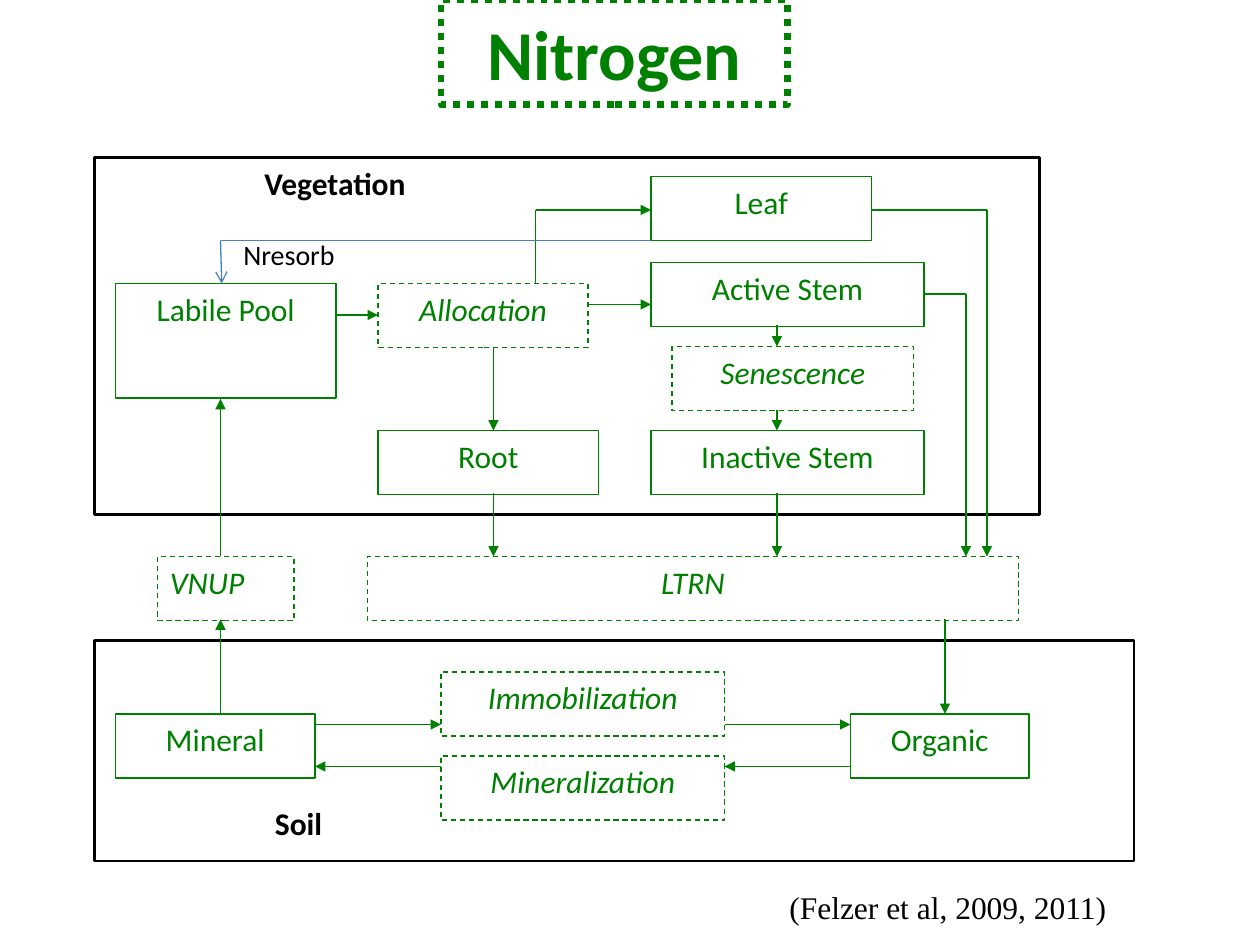
import itertools

import pptx
import pptx.dml.color
import pptx.enum.dml
import pptx.enum.shapes
import pptx.enum.text
import pptx.oxml
import pptx.oxml.ns
import pptx.util

Pt = pptx.util.Pt
ALIGN = pptx.enum.text.PP_ALIGN
DASH = pptx.enum.dml.MSO_LINE
COLORS = {"green": "008000", "black": "000000", "blue": "4B7EBC"}


class Diagram:
    """Style and current page; all lengths are in points."""

    font = "Calibri"
    size = 18
    line_width = 0.75

    def __init__(self, page):
        self.page = page

    def color(self, name):
        return pptx.dml.color.RGBColor.from_string(COLORS[name])

    def place(self, box, left, top, width, height):
        box.left, box.top, box.width, box.height = map(Pt, (left, top, width, height))

    def outline(self, line, color, width, dash=None):
        line.color.rgb = self.color(color)
        line.width = Pt(width)
        if dash:
            line.dash_style = dash

    def add_text(self, box, text, color, align=ALIGN.LEFT, size=None, font=None,
                 bold=False, italic=False, wrap=True):
        frame = box.text_frame
        frame.word_wrap = wrap
        fit = pptx.enum.text.MSO_AUTO_SIZE
        frame.auto_size = fit.NONE if wrap else fit.SHAPE_TO_FIT_TEXT
        para = frame.paragraphs[0]
        para.alignment = align
        span = para.add_run()
        span.text = text
        span.font.name = font or self.font
        span.font.size = Pt(size or self.size)
        span.font.bold, span.font.italic = bold, italic
        span.font.color.rgb = self.color(color)

    def title(self, text, *area):
        box = self.page.shapes.title
        self.place(box, *area)
        self.outline(box.line, "green", 4, DASH.ROUND_DOT)
        self.add_text(box, text, "green", ALIGN.CENTER, size=40, bold=True)
        box.text_frame.vertical_anchor = pptx.enum.text.MSO_ANCHOR.MIDDLE

    def frame(self, left, top, width, height, color="black", line_width=1.5, dash=None):
        box = self.page.shapes.add_shape(
            pptx.enum.shapes.MSO_SHAPE.RECTANGLE, *map(Pt, (left, top, width, height)))
        box.shadow.inherit = False
        box.fill.background()
        self.outline(box.line, color, line_width, dash)
        return box

    def node(self, text, left, top, width, height=36.6, flux=False, align=ALIGN.CENTER):
        """A pool has a solid outline; a flux is dashed with italic text."""
        box = self.frame(left, top, width, height, "green", self.line_width,
                         DASH.DASH if flux else None)
        box.text_frame.vertical_anchor = pptx.enum.text.MSO_ANCHOR.TOP
        self.add_text(box, text, "green", align, italic=flux)

    def label(self, text, left, top, width, height=29, **style):
        box = self.page.shapes.add_textbox(*map(Pt, (left, top, width, height)))
        self.add_text(box, text, "black", **style)

    def route(self, *points, color="green", head="triangle"):
        """Straight lines through the points, with a head on the last one."""
        for start, end in itertools.pairwise(points):
            line = self.page.shapes.add_connector(
                pptx.enum.shapes.MSO_CONNECTOR.STRAIGHT, *map(Pt, start + end))
            self.outline(line.line, color, self.line_width)
            props = line._element.spPr
            props.append(pptx.oxml.parse_xml(
                f"<a:effectLst {pptx.oxml.ns.nsdecls('a')}/>"))
        props.find(pptx.oxml.ns.qn("a:ln")).append(pptx.oxml.parse_xml(
            f'<a:tailEnd {pptx.oxml.ns.nsdecls("a")} type="{head}"/>'))


def main():
    deck = pptx.Presentation()
    deck.slide_width, deck.slide_height = Pt(720), Pt(540)
    diagram = Diagram(deck.slides.add_slide(deck.slide_layouts[5]))

    diagram.title("Nitrogen", 252, 0, 198, 60)
    diagram.frame(54, 90, 540, 204)
    diagram.frame(54, 366, 594, 126)
    diagram.label("Vegetation", 144, 90, 108, bold=True)
    diagram.label("Soil", 150, 456, 54, bold=True)

    diagram.node("Labile Pool", 66, 162, 126, 65.5)
    for text, left, top, width in (
        ("Leaf", 372, 100.8, 126),
        ("Active Stem", 372, 150, 156),
        ("Inactive Stem", 372, 246, 156),
        ("Root", 216, 246, 126),
        ("Organic", 486, 408, 102),
        ("Mineral", 66, 408, 114),
    ):
        diagram.node(text, left, top, width)

    diagram.node("VNUP", 90, 318, 78, flux=True, align=ALIGN.LEFT)
    for text, left, top, width in (
        ("LTRN", 210, 318, 372),
        ("Allocation", 216, 162, 120),
        ("Senescence", 384, 198, 138),
        ("Immobilization", 252, 384, 162),
        ("Mineralization", 252, 432, 162),
    ):
        diagram.node(text, left, top, width, flux=True)

    # Vertical flows: x, start y, end y
    for x, start, end in (
        (126, 318, 228), (126, 408, 354), (540, 354, 408),
        (282, 198, 246), (282, 282, 318),
        (444, 186, 198), (444, 234, 246), (444, 282, 318),
    ):
        diagram.route((x, start), (x, end))

    # Horizontal flows: y, start x, end x
    for y, start, end in (
        (180, 192, 216), (174, 336, 372),
        (414, 180, 252), (414, 414, 486),
        (438, 486, 414), (438, 252, 180),
    ):
        diagram.route((start, y), (end, y))

    diagram.route((306, 162), (306, 120), (372, 120))
    diagram.route((528, 168), (552, 168), (552, 318))
    diagram.route((498, 120), (564, 120), (564, 318))
    diagram.route((372, 137.4), (126, 137.4), (126.7, 162), color="blue", head="arrow")

    diagram.label("Nresorb", 132, 132.5, 67, 26.6, size=16, wrap=False)
    diagram.label("(Felzer et al, 2009, 2011)", 444, 504, 198,
                  font="Times New Roman", wrap=False)
    deck.save("out.pptx")


if __name__ == "__main__":
    main()
